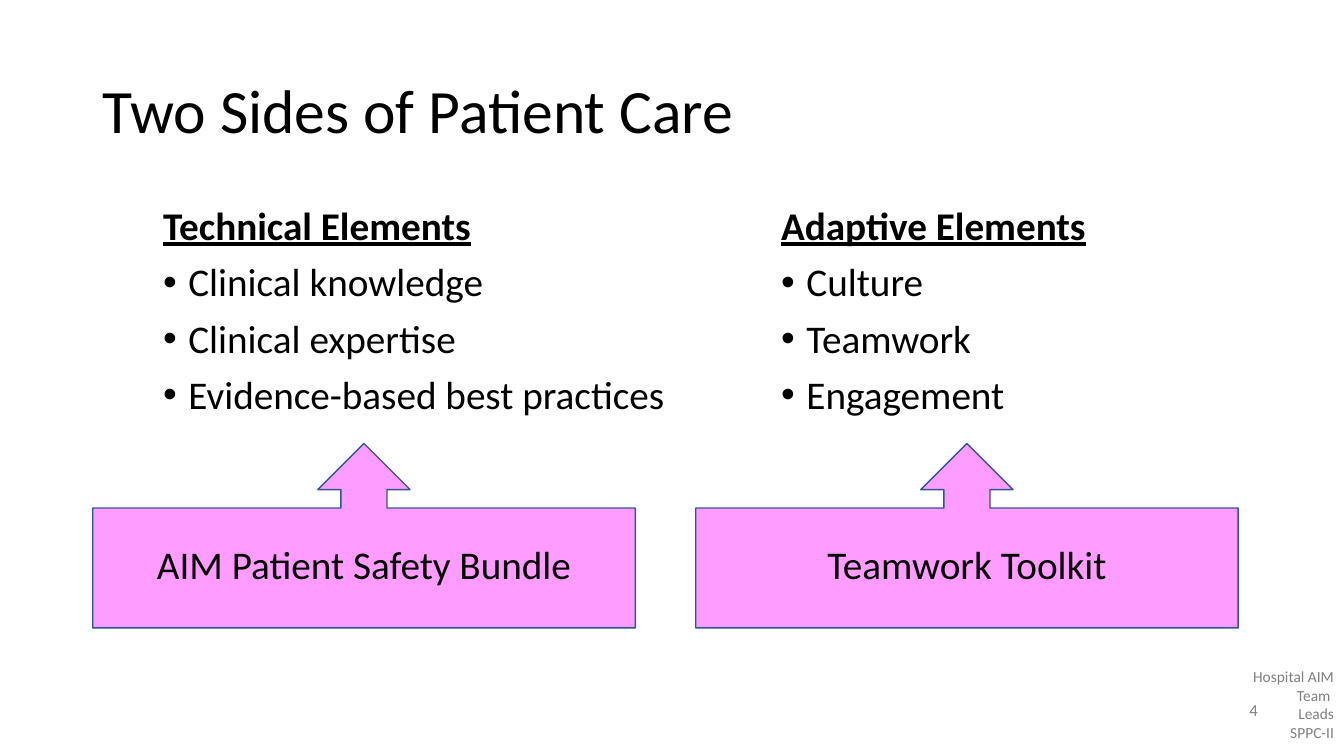
from dataclasses import dataclass

from lxml.etree import SubElement
from pptx import Presentation
from pptx.dml.color import RGBColor
from pptx.enum.shapes import MSO_SHAPE
from pptx.enum.text import MSO_ANCHOR, PP_ALIGN
from pptx.oxml.ns import qn
from pptx.util import Inches, Pt

# Content
TITLE = "Two Sides of Patient Care"
SIDES = [
    {
        "heading": "Technical Elements",
        "bullets": ["Clinical knowledge", "Clinical expertise", "Evidence-based best practices"],
        "resource": "AIM Patient Safety Bundle",
        "list_indent": 0.6,
    },
    {
        "heading": "Adaptive Elements",
        "bullets": ["Culture", "Teamwork", "Engagement"],
        "resource": "Teamwork Toolkit",
        "list_indent": 0.75,
    },
]
FOOTER = ["Hospital AIM Team ", "Leads", "SPPC-II"]
PAGE_NUMBER = "4"


@dataclass(frozen=True)
class Theme:
    font: str = "Calibri"
    text: str = "000000"
    muted: str = "808080"
    callout_fill: str = "FF9CFF"
    callout_line: str = "325491"
    title_size: int = 44
    body_size: int = 28
    number_size: int = 12
    footer_size: int = 11


THEME = Theme()

# Grid, in inches
SLIDE_WIDTH, SLIDE_HEIGHT = 13.33, 7.5
MARGIN = 0.92
COLUMN_WIDTH, COLUMN_GAP = 5.38, 0.6
LIST_TOP, LIST_WIDTH, LIST_HEIGHT = 2, 5.48, 2.4
CALLOUT_TOP, CALLOUT_HEIGHT = 4.4, 1.83
LABEL_TOP, LABEL_HEIGHT = 5.31, 0.57
BULLET_INDENT = 0.25


def add_bullet(paragraph):
    properties = paragraph._p.get_or_add_pPr()
    properties.set("marL", str(Inches(BULLET_INDENT)))
    properties.set("indent", str(-Inches(BULLET_INDENT)))
    SubElement(properties, qn("a:buFont"), typeface="Arial")
    SubElement(properties, qn("a:buChar"), char="•")


def style(paragraph, size, color):
    font = paragraph.font
    font.name = THEME.font
    font.size = Pt(size)
    font.color.rgb = RGBColor.from_string(color)


def add_text(slide, box, lines, size, color=THEME.text, align=PP_ALIGN.LEFT,
             anchor=MSO_ANCHOR.TOP, spacing=None, bulleted=False):
    """Add a text box; when bulleted, every line after the first is a bullet."""
    frame = slide.shapes.add_textbox(*map(Inches, box)).text_frame
    frame.word_wrap = True
    frame.vertical_anchor = anchor
    for index, line in enumerate(lines):
        paragraph = frame.add_paragraph() if index else frame.paragraphs[0]
        paragraph.text = line
        paragraph.alignment = align
        if spacing:
            paragraph.line_spacing = spacing
        if bulleted and index:
            paragraph.space_before = Pt(10)
            add_bullet(paragraph)
        style(paragraph, size, color)
    return frame


def add_callout(slide, box):
    shape = slide.shapes.add_shape(MSO_SHAPE.UP_ARROW_CALLOUT, *map(Inches, box))
    shape.shadow.inherit = False
    shape.fill.solid()
    shape.fill.fore_color.rgb = RGBColor.from_string(THEME.callout_fill)
    shape.line.color.rgb = RGBColor.from_string(THEME.callout_line)
    shape.line.width = Pt(1)


def add_side(slide, column, side):
    left = MARGIN + column * (COLUMN_WIDTH + COLUMN_GAP)
    add_callout(slide, (left, CALLOUT_TOP, COLUMN_WIDTH, CALLOUT_HEIGHT))
    elements = add_text(
        slide, (left + side["list_indent"], LIST_TOP, LIST_WIDTH, LIST_HEIGHT),
        [side["heading"], *side["bullets"]], THEME.body_size, spacing=0.9, bulleted=True)
    heading_font = elements.paragraphs[0].runs[0].font
    heading_font.bold = True
    heading_font.underline = True
    add_text(slide, (left, LABEL_TOP, COLUMN_WIDTH, LABEL_HEIGHT),
             [side["resource"]], THEME.body_size, align=PP_ALIGN.CENTER)


def main():
    presentation = Presentation()
    presentation.slide_width = Inches(SLIDE_WIDTH)
    presentation.slide_height = Inches(SLIDE_HEIGHT)
    slide = presentation.slides.add_slide(presentation.slide_layouts[6])

    # Title
    add_text(slide, (MARGIN, 0.4, SLIDE_WIDTH - 2 * MARGIN, 1.45), [TITLE],
             THEME.title_size, anchor=MSO_ANCHOR.MIDDLE, spacing=0.9)

    # Two sides, each a list above its callout
    for column, side in enumerate(SIDES):
        add_side(slide, column, side)

    # Footer and page number
    add_text(slide, (12.17, 6.57, 1.16, 0.84), FOOTER, THEME.footer_size,
             THEME.muted, PP_ALIGN.RIGHT)
    add_text(slide, (12.2, 6.84, 0.47, 0.4), [PAGE_NUMBER], THEME.number_size,
             THEME.muted, PP_ALIGN.CENTER, MSO_ANCHOR.MIDDLE)

    presentation.save("out.pptx")


if __name__ == "__main__":
    main()
